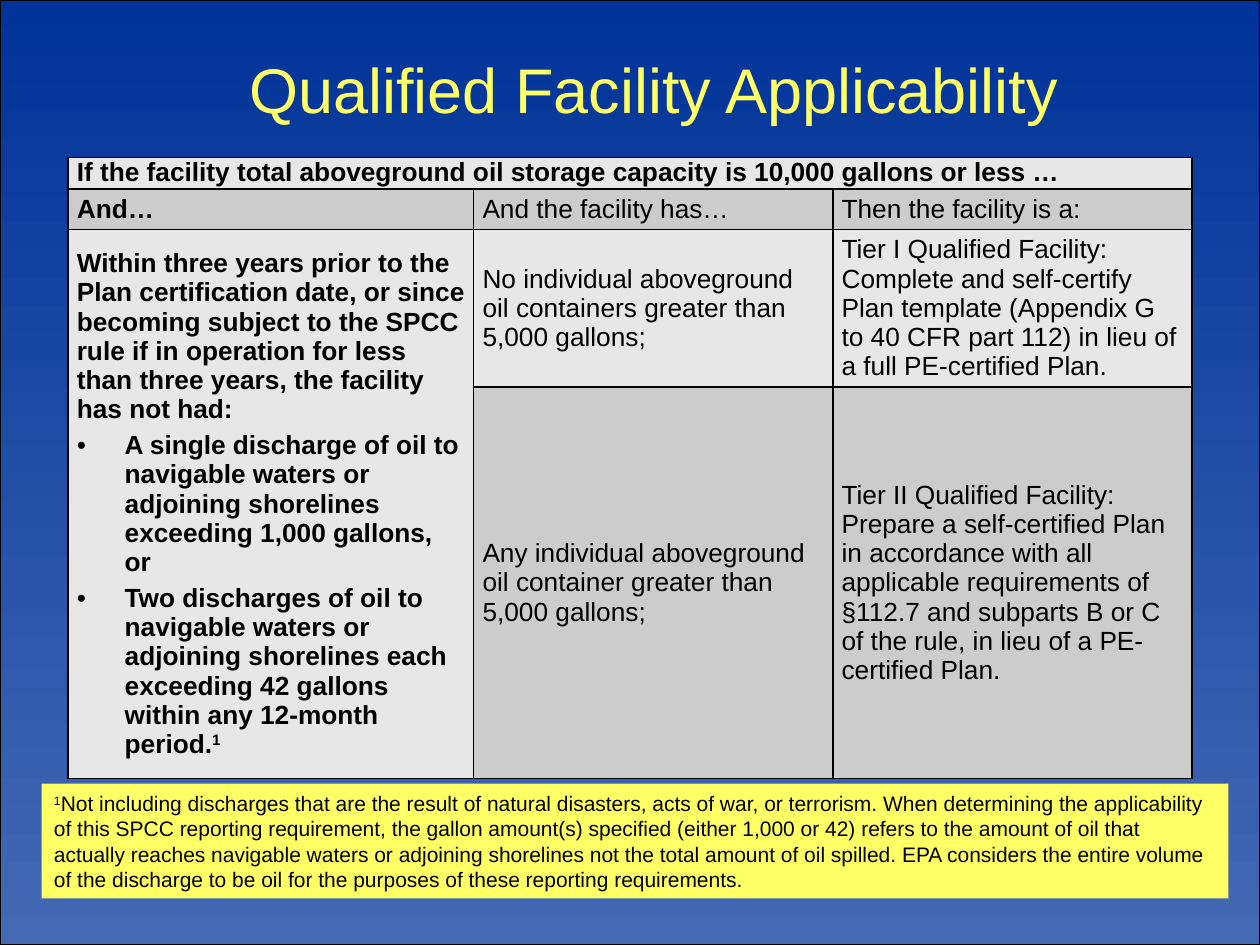
from lxml import etree
from pptx import Presentation
from pptx.dml.color import RGBColor
from pptx.enum.shapes import MSO_SHAPE
from pptx.enum.text import MSO_ANCHOR, MSO_AUTO_SIZE, PP_ALIGN
from pptx.oxml.ns import qn
from pptx.util import Inches, Pt

RECT = MSO_SHAPE.RECTANGLE
TOP, MIDDLE = MSO_ANCHOR.TOP, MSO_ANCHOR.MIDDLE
LEFT, CENTER = PP_ALIGN.LEFT, PP_ALIGN.CENTER
NO_FIT = MSO_AUTO_SIZE.NONE

NAVY = RGBColor(0x00, 0x33, 0x99)
BLUE = RGBColor(0x43, 0x69, 0xB4)
YELLOW = RGBColor(0xFF, 0xFF, 0x66)
BLACK = RGBColor(0x00, 0x00, 0x00)
LIGHT = RGBColor(0xE7, 0xE7, 0xE7)
GRAY = RGBColor(0xCC, 0xCC, 0xCC)

FONT = "Arial"
HANG = Inches(0.38)
COLS = [3.22, 2.85, 2.85]
ROWS = [0.25, 0.32, 1.25, 3.11]
FILLS = [LIGHT, GRAY, LIGHT, GRAY]

HEAD = "If the facility total aboveground oil storage capacity is 10,000 gallons or less …"
PERIOD = (
    "Within three years prior to the Plan certification date, or since becoming "
    "subject to the SPCC rule if in operation for less than three years, the "
    "facility has not had:"
)
SINGLE = (
    "A single discharge of oil to navigable waters or adjoining shorelines "
    "exceeding 1,000 gallons, or"
)
DOUBLE = (
    "Two discharges of oil to navigable waters or adjoining shorelines each "
    "exceeding 42 gallons within any 12-month period."
)
# Plain cells: (row, column, lines, bold)
CELLS = [
    (1, 0, ["And…"], True),
    (1, 1, ["And the facility has…"], False),
    (1, 2, ["Then the facility is a:"], False),
    (2, 1, ["No individual aboveground oil containers greater than 5,000 gallons;"], False),
    (2, 2, ["Tier I Qualified Facility:",
            "Complete and self-certify Plan template (Appendix G to 40 CFR part 112) "
            "in lieu of a full PE-certified Plan."], False),
    (3, 1, ["Any individual aboveground oil container greater than 5,000 gallons;"], False),
    (3, 2, ["Tier II Qualified Facility:",
            "Prepare a self-certified Plan in accordance with all applicable "
            "requirements of §112.7 and subparts B or C of the rule, in lieu of a "
            "PE-certified Plan."], False),
]
NOTE = (
    "Not including discharges that are the result of natural disasters, acts of "
    "war, or terrorism. When determining the applicability of this SPCC reporting "
    "requirement, the gallon amount(s) specified (either 1,000 or 42) refers to the "
    "amount of oil that actually reaches navigable waters or adjoining shorelines "
    "not the total amount of oil spilled. EPA considers the entire volume of the "
    "discharge to be oil for the purposes of these reporting requirements."
)


def add_run(para, text, size, color=BLACK, bold=False, raised=False):
    run = para.add_run()
    run.text = text
    font = run.font
    font.name, font.size, font.bold = FONT, Pt(size), bold
    font.color.rgb = color
    if raised:
        run._r.get_or_add_rPr().set("baseline", "30000")


def add_rect(slide, x, y, w, h, fill=None, line=None):
    rect = slide.shapes.add_shape(RECT, Inches(x), Inches(y), Inches(w), Inches(h))
    rect.shadow.inherit = False
    if fill is None:
        rect.fill.background()
    else:
        rect.fill.solid()
        rect.fill.fore_color.rgb = fill
    if line is None:
        rect.line.fill.background()
    else:
        rect.line.color.rgb = line
        rect.line.width = Pt(0.75)
    return rect


def add_title(slide):
    title = slide.shapes.title
    title.left, title.top = Inches(0.5), Inches(0.08)
    title.width, title.height = Inches(9), Inches(1.25)
    frame = title.text_frame
    frame.auto_size, frame.vertical_anchor = NO_FIT, MIDDLE
    para = frame.paragraphs[0]
    para.alignment = CENTER
    props = para._p.get_or_add_pPr()
    props.set("marL", str(HANG))
    props.set("indent", "0")
    add_run(para, "Qualified Facility Applicability", 36, YELLOW)


def style_cell(cell, fill, anchor):
    cell.margin_left = cell.margin_right = Inches(0.07)
    cell.margin_top = cell.margin_bottom = 0
    cell.vertical_anchor = anchor
    cell.fill.solid()
    cell.fill.fore_color.rgb = fill
    props = cell._tc.get_or_add_tcPr()
    for i, side in enumerate(["lnL", "lnR", "lnT", "lnB"]):
        line = etree.Element(qn("a:" + side), w=str(Pt(1)))
        solid = etree.SubElement(line, qn("a:solidFill"))
        etree.SubElement(solid, qn("a:srgbClr"), val=str(BLACK))
        props.insert(i, line)


def add_para(cell, lines, bold, gap=2, bullet=False):
    frame = cell.text_frame
    para = frame.paragraphs[0]
    if para.runs:
        para = frame.add_paragraph()
    para.alignment = LEFT
    para.space_before = para.space_after = Pt(gap)
    if bullet:
        props = para._p.get_or_add_pPr()
        props.set("marL", str(HANG))
        props.set("indent", str(-HANG))
        etree.SubElement(props, qn("a:buFont"), typeface=FONT)
        etree.SubElement(props, qn("a:buChar"), char="•")
    for i, line in enumerate(lines):
        if i:
            para.add_line_break()
        add_run(para, line, 15, bold=bold)
    return para


def add_grid(slide):
    table = slide.shapes.add_table(
        len(ROWS), len(COLS), Inches(0.54), Inches(1.25),
        Inches(sum(COLS)), Inches(sum(ROWS))).table
    table.first_row = table.horz_banding = False
    for col, width in zip(table.columns, COLS):
        col.width = Inches(width)
    for r, (row, height) in enumerate(zip(table.rows, ROWS)):
        row.height = Inches(height)
        for cell in row.cells:
            style_cell(cell, FILLS[r], MIDDLE if r else TOP)

    # Heading across the top, conditions down the left
    head, terms = table.cell(0, 0), table.cell(2, 0)
    head.merge(table.cell(0, 2))
    terms.merge(table.cell(3, 0))
    add_para(head, [HEAD], True, gap=6)
    add_para(terms, [PERIOD], True)
    add_para(terms, [SINGLE], True, bullet=True)
    last = add_para(terms, [DOUBLE], True, bullet=True)
    add_run(last, "1", 15, bold=True, raised=True)

    for r, c, lines, bold in CELLS:
        add_para(table.cell(r, c), lines, bold)


def add_note(slide):
    frame = add_rect(slide, 0.33, 6.22, 9.42, 0.91, fill=YELLOW).text_frame
    frame.word_wrap, frame.vertical_anchor = True, MIDDLE
    para = frame.paragraphs[0]
    para.alignment = LEFT
    add_run(para, "1", 12, raised=True)
    add_run(para, NOTE, 12)


def paint_back(slide):
    fill = slide.background.fill
    fill.gradient()
    fill.gradient_angle = 270
    for stop, color in zip(fill.gradient_stops, [NAVY, BLUE]):
        stop.color.rgb = color


def main():
    prs = Presentation()
    prs.slide_width, prs.slide_height = Inches(10), Inches(7.5)
    slide = prs.slides.add_slide(prs.slide_layouts[5])
    paint_back(slide)
    add_rect(slide, 0, 0, 10, 7.5, line=BLACK)
    add_title(slide)
    add_grid(slide)
    add_note(slide)
    prs.save("out.pptx")


if __name__ == "__main__":
    main()
